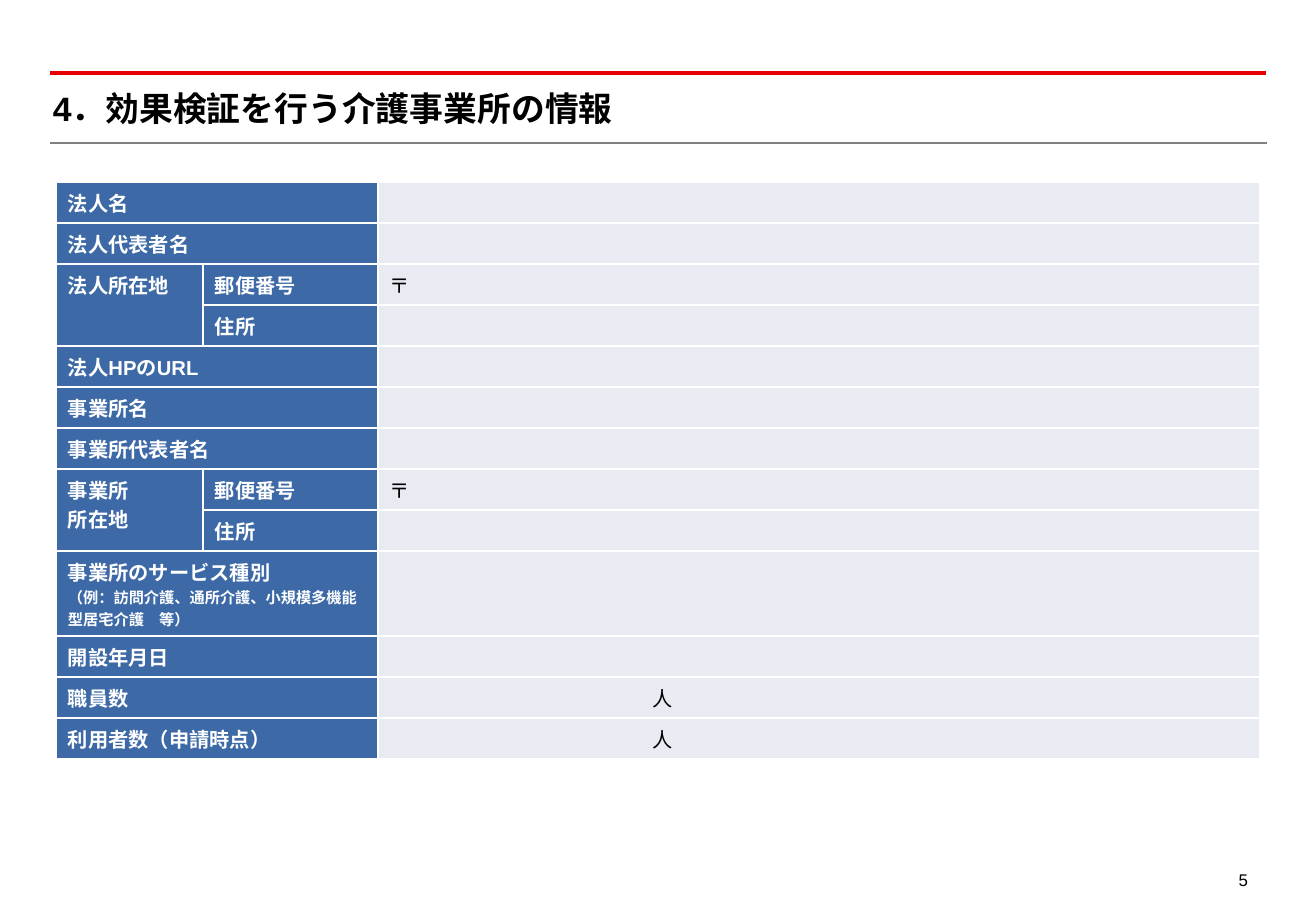
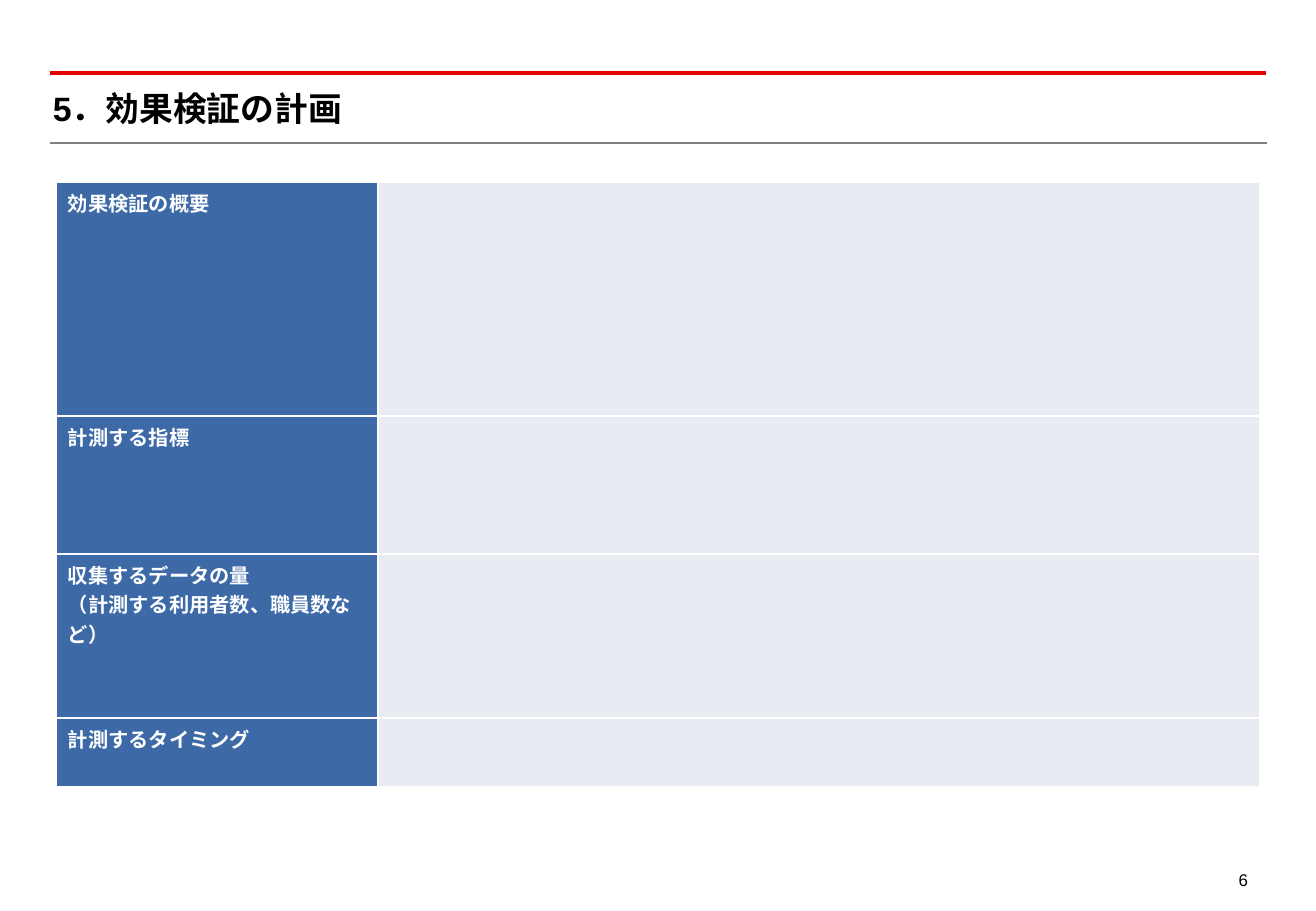
from lxml import etree
from pptx import Presentation, util as u
from pptx.dml import color
from pptx.enum import shapes, text
from pptx.oxml import ns

FONT = "Arial"
BLACK, WHITE, RED, GREY = "000000", "FFFFFF", "E60000", "808080"
LABEL_FILL, VALUE_FILL = "3D6AA7", "E8EBF1"
TITLE_SIZE, BODY_SIZE, NOTE_SIZE, PAGE_SIZE = 20, 12, 9, 10
INSET, UNIT_INDENT, ROW = 12, 275, 41
TABLE_LEFT, TABLE_TOP = 56, 182
RULES = [(50, 73, 1266, RED, 2), (50, 143, 1267, GREY, 1.25)]

PAGES = [
    {
        "number": 5,
        "title": "4．効果検証を行う介護事業所の情報",
        "columns": [147, 175, 882],
        "rows": [
            (["法人名"], "", ROW),
            (["法人代表者名"], "", ROW),
            (["法人所在地", "郵便番号"], "〒", ROW),
            ([None, "住所"], "", ROW),
            (["法人HPのURL"], "", ROW),
            (["事業所名"], "", ROW),
            (["事業所代表者名"], "", ROW),
            (["事業所\n所在地", "郵便番号"], "〒", ROW),
            ([None, "住所"], "", ROW),
            (["事業所のサービス種別\n（例：訪問介護、通所介護、小規模多機能型居宅介護　等）"], "", 85),
            (["開設年月日"], "", ROW),
            (["職員数"], "人", ROW),
            (["利用者数（申請時点）"], "人", ROW),
        ],
    },
    {
        "number": 6,
        "title": "5．効果検証の計画",
        "columns": [322, 882],
        "rows": [
            (["効果検証の概要"], "", 234),
            (["計測する指標"], "", 138),
            (["収集するデータの量\n（計測する利用者数、職員数など）"], "", 164),
            (["計測するタイミング"], "", 69),
        ],
    },
]


def px(length):
    return u.Emu(round(length * 914400 / 121.5))


def rgb(value):
    return color.RGBColor.from_string(value)


def add_span(para, words, size, ink, bold=False):
    span = para.add_run()
    span.text = words
    span.font.name = FONT
    span.font.size = u.Pt(size)
    span.font.bold = bold
    span.font.color.rgb = rgb(ink)


def add_rule(page, left, top, right, ink, width):
    rule = page.shapes.add_connector(
        shapes.MSO_CONNECTOR.STRAIGHT, px(left), px(top), px(right), px(top))
    rule.line.color.rgb = rgb(ink)
    rule.line.width = u.Pt(width)
    etree.SubElement(rule._element.spPr, ns.qn("a:effectLst"))


def add_box(page, left, top, width, height, inset):
    frame = page.shapes.add_textbox(px(left), px(top), px(width), px(height)).text_frame
    frame.word_wrap = True
    frame.margin_left = frame.margin_right = px(inset)
    frame.margin_top = frame.margin_bottom = px(inset / 2)
    return frame


def style_cell(cell, fill):
    properties = cell._tc.get_or_add_tcPr()
    for side in ("lnL", "lnR", "lnT", "lnB"):
        line = etree.SubElement(properties, ns.qn("a:" + side), w=str(u.Pt(1)))
        solid = etree.SubElement(line, ns.qn("a:solidFill"))
        etree.SubElement(solid, ns.qn("a:srgbClr"), val=WHITE)
    cell.fill.solid()
    cell.fill.fore_color.rgb = rgb(fill)
    cell.margin_left = cell.margin_right = px(INSET)
    cell.margin_top = cell.margin_bottom = px(INSET / 2)
    end = cell.text_frame.paragraphs[0]._p.get_or_add_endParaRPr()
    end.set("sz", str(BODY_SIZE * 100))


def fill_label(cell, label):
    for index, words in enumerate(label.split("\n")):
        frame = cell.text_frame
        para = frame.add_paragraph() if index else frame.paragraphs[0]
        size = NOTE_SIZE if words.startswith("（例") else BODY_SIZE
        add_span(para, words, size, WHITE, True)


def add_form(page, columns, rows):
    heights = [height for _, _, height in rows]
    table = page.shapes.add_table(
        len(rows), len(columns), px(TABLE_LEFT), px(TABLE_TOP),
        px(sum(columns)), px(sum(heights))).table
    table.first_row = table.horz_banding = False
    for column, width in zip(table.columns, columns):
        column.width = px(width)
    last = len(columns) - 1
    for r, (labels, value, height) in enumerate(rows):
        table.rows[r].height = px(height)
        for c in range(len(columns)):
            style_cell(table.cell(r, c), VALUE_FILL if c == last else LABEL_FILL)
        for c, label in enumerate(labels):
            if label is None:
                table.cell(r - 1, c).merge(table.cell(r, c))
            else:
                fill_label(table.cell(r, c), label)
        if len(labels) < last:
            table.cell(r, 0).merge(table.cell(r, last - 1))
        if value:
            cell = table.cell(r, last)
            add_span(cell.text_frame.paragraphs[0], value, BODY_SIZE, BLACK)
            if value == "人":
                cell.margin_left = px(UNIT_INDENT)


def add_frame(page, title, number):
    for rule in RULES:
        add_rule(page, *rule)
    heading = add_box(page, 53, 87, 1204, 41, 0)
    heading.vertical_anchor = text.MSO_ANCHOR.MIDDLE
    add_span(heading.paragraphs[0], title, TITLE_SIZE, BLACK, True)
    para = add_box(page, 1206, 860, 54, 34, INSET).paragraphs[0]
    para.alignment = text.PP_ALIGN.RIGHT
    para.line_spacing = 1.2
    add_span(para, str(number), PAGE_SIZE, BLACK)


def main():
    """Build the application form slides."""
    deck = Presentation()
    deck.slide_width, deck.slide_height = px(1316), px(911)
    for content in PAGES:
        page = deck.slides.add_slide(deck.slide_layouts[6])
        add_frame(page, content["title"], content["number"])
        add_form(page, content["columns"], content["rows"])
    deck.save("out.pptx")


if __name__ == "__main__":
    main()
